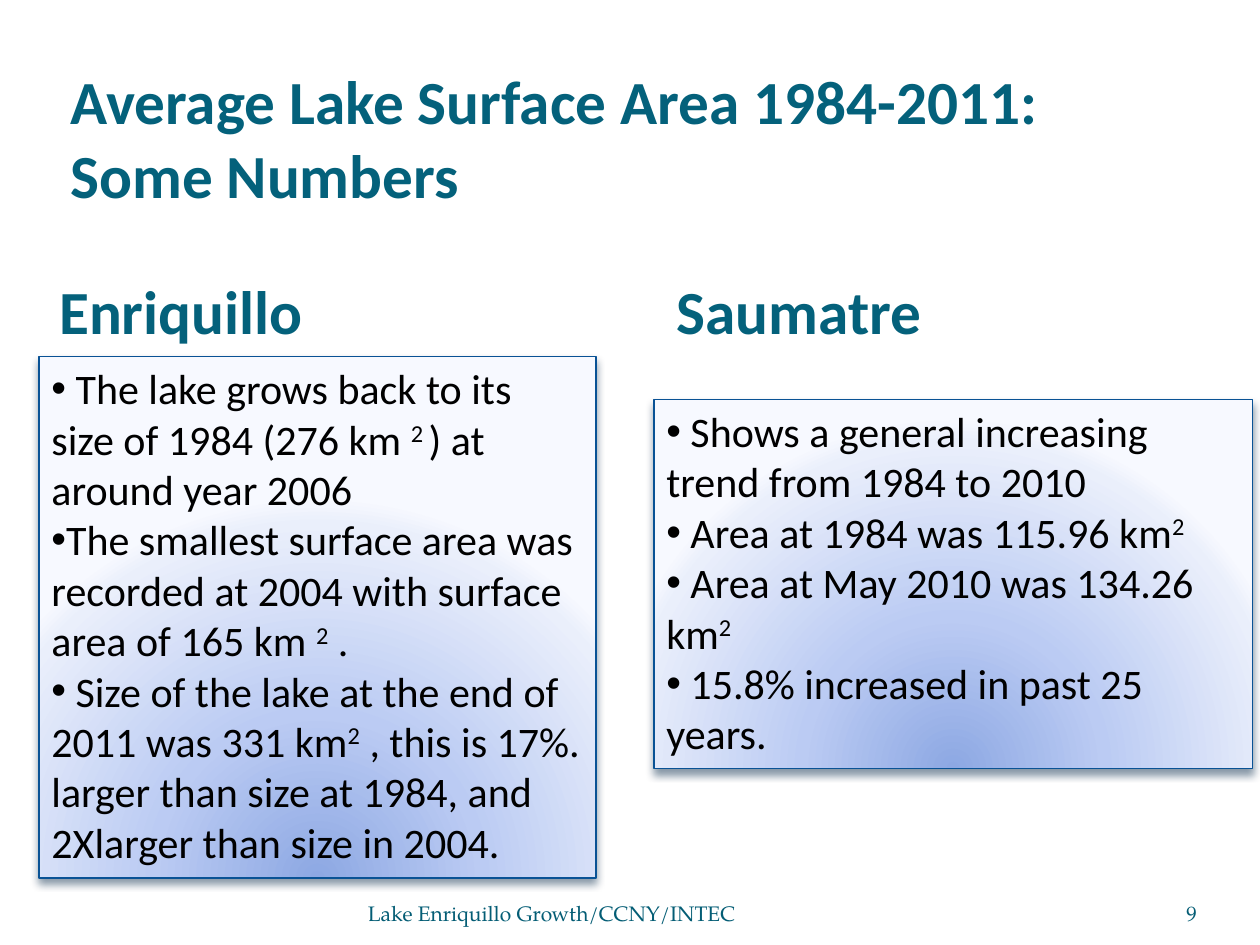
from lxml import etree
from pptx import Presentation
from pptx.dml.color import RGBColor as RGB
from pptx.enum.shapes import MSO_SHAPE as SHAPE
from pptx.enum.text import MSO_ANCHOR as ANCHOR, MSO_AUTO_SIZE as AUTO, PP_ALIGN as ALIGN
from pptx.oxml import parse_xml
from pptx.oxml.ns import nsdecls, qn
from pptx.util import Inches, Pt

COLORS = {
    "title": "04617B", "footer": "045D75", "body": "000000",
    "border": "095295", "shadow": "042747",
}
GRADIENT = [(0, "8DA8E3"), (43, "BBCBF3"), (93, "EAEFFB"), (100, "F7F9FF")]
HEADING = {"name": "Calibri", "size": Pt(35), "bold": True}
BODY = {"name": "Calibri", "size": Pt(24), "bold": False}
FOOTER = {"name": "TeX Gyre Pagella", "size": Pt(12), "bold": False}

ENRIQUILLO = [
    [" The lake grows back to its size of 1984 (276 km ", "2 ", ") at around year 2006"],
    ["The smallest surface area was recorded at 2004 with surface area of 165 km ", "2", " ."],
    [" Size of the lake at the end of 2011 was 331 km", "2",
     " , this is 17%. larger than size at 1984, and 2Xlarger than size in 2004."],
]
SAUMATRE = [
    [" Shows a general increasing trend from 1984 to 2010"],
    [" Area at 1984 was 115.96 km", "2"],
    [" Area at May 2010 was 134.26 km", "2"],
    [" 15.8% increased in past 25 years."],
]


def set_font(font, values, color):
    for key, value in values.items():
        setattr(font, key, value)
    font.color.rgb = RGB.from_string(COLORS[color])


def add_label(s, box, text, values, color, top_inset=0, align=ALIGN.LEFT):
    tf = s.shapes.add_textbox(*map(Inches, box)).text_frame
    frame = {
        "word_wrap": True, "vertical_anchor": ANCHOR.BOTTOM,
        "margin_left": 0, "margin_right": 0, "margin_bottom": 0,
        "margin_top": Inches(top_inset),
    }
    for key, value in frame.items():
        setattr(tf, key, value)
    p = tf.paragraphs[0]
    p.text = text
    p.alignment = align
    for r in p.runs:
        set_font(r.font, values, color)
    return p


def add_lake_headings(s, box, names, tab):
    p = add_label(s, box, "\t".join(names), HEADING, "title", 0.05)
    tabs = etree.SubElement(p._p.get_or_add_pPr(), qn("a:tabLst"))
    etree.SubElement(tabs, qn("a:tab"), pos=str(Inches(tab)), algn="l")


def style_panel(sp):
    stops = "".join(
        f'<a:gs pos="{pos * 1000}"><a:srgbClr val="{color}"/></a:gs>'
        for pos, color in GRADIENT
    )
    sp.fill.background()
    no_fill = sp._element.spPr.find(qn("a:noFill"))
    no_fill.getparent().replace(no_fill, parse_xml(
        f'<a:gradFill {nsdecls("a")} rotWithShape="1"><a:gsLst>{stops}</a:gsLst>'
        '<a:path path="circle"><a:fillToRect l="50000" t="130000" r="50000" b="-30000"/>'
        '</a:path></a:gradFill>'
    ))
    sp.line.color.rgb = RGB.from_string(COLORS["border"])
    sp.line.width = Pt(0.75)
    sp.shadow.inherit = False
    sp._element.spPr.find(qn("a:effectLst")).append(parse_xml(
        f'<a:outerShdw {nsdecls("a")} blurRad="{Pt(4.5)}" dist="{Pt(3)}" dir="5400000" '
        f'rotWithShape="0"><a:srgbClr val="{COLORS["shadow"]}"><a:alpha val="48000"/>'
        '</a:srgbClr></a:outerShdw>'
    ))


def add_lake_panel(s, box, points):
    sp = s.shapes.add_shape(SHAPE.RECTANGLE, *map(Inches, box))
    style_panel(sp)
    tf = sp.text_frame
    tf.word_wrap = True
    tf.auto_size = AUTO.SHAPE_TO_FIT_TEXT
    tf.vertical_anchor = ANCHOR.TOP
    for i, parts in enumerate(points):
        p = tf.add_paragraph() if i else tf.paragraphs[0]
        p.alignment = ALIGN.LEFT
        pPr = p._p.get_or_add_pPr()
        etree.SubElement(pPr, qn("a:buFont"), typeface="Arial")
        etree.SubElement(pPr, qn("a:buChar"), char="•")
        for j, text in enumerate(parts):
            r = p.add_run()
            r.text = text
            set_font(r.font, BODY, "body")
            if j % 2:
                r._r.get_or_add_rPr().set("baseline", "30000")


def add_footer(s, left, top, text, number):
    add_label(s, (left, top, 3.67, 0.4), text, FOOTER, "footer")
    add_label(s, (8.67, top, 0.83, 0.4), number, FOOTER, "footer", align=ALIGN.RIGHT)


def main():
    prs = Presentation()
    prs.slide_width, prs.slide_height = Inches(10), Inches(7.5)
    s = prs.slides.add_slide(prs.slide_layouts[6])
    add_lake_panel(s, (0.31, 2.83, 4.42, 4.14), ENRIQUILLO)
    add_lake_panel(s, (5.19, 3.17, 4.75, 2.93), SAUMATRE)
    add_label(s, (0.56, -0.08, 9, 1.75),
              "Average Lake Surface Area 1984-2011: \vSome Numbers", HEADING, "title", 0.05)
    add_lake_headings(s, (0.47, 2.17, 9, 0.58), ("Enriquillo", "Saumatre"), 4.9)
    add_footer(s, 2.92, 6.95, "Lake Enriquillo Growth/CCNY/INTEC", "9")
    prs.save("out.pptx")


if __name__ == "__main__":
    main()
